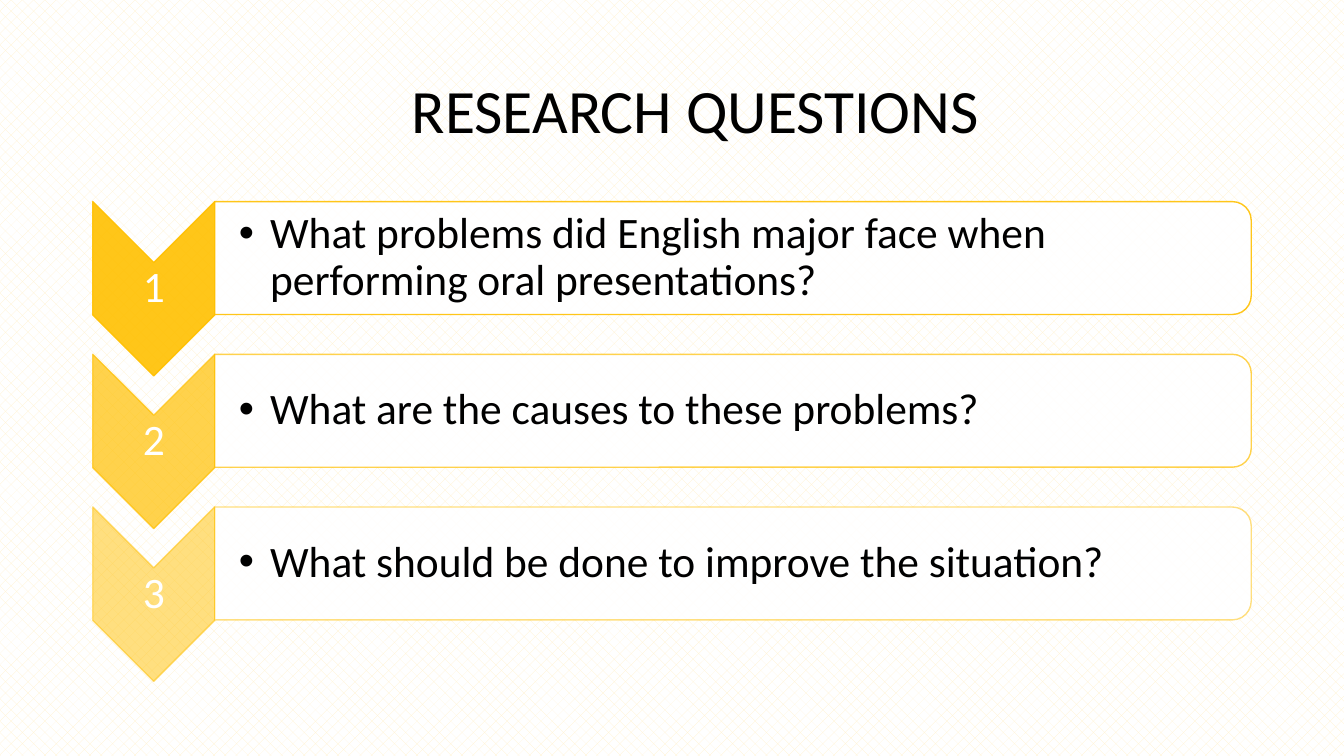
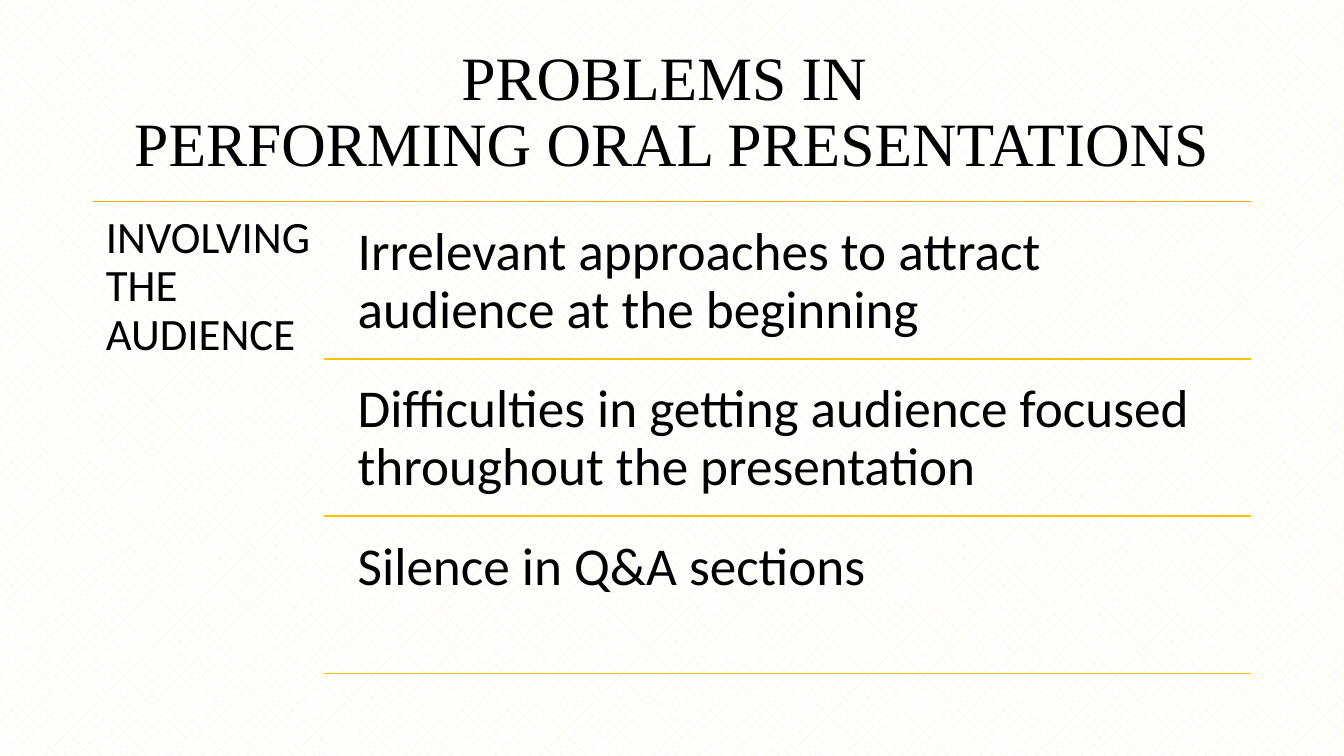
import pptx
import pptx.util
import pptx.dml.color
import pptx.enum.dml
import pptx.enum.shapes
import pptx.enum.text
import pptx.oxml.ns
import lxml.etree

Inches = pptx.util.Inches
Pt = pptx.util.Pt
RGBColor = pptx.dml.color.RGBColor
Shape = pptx.enum.shapes.MSO_SHAPE
Align = pptx.enum.text.PP_ALIGN
Anchor = pptx.enum.text.MSO_ANCHOR
qn = pptx.oxml.ns.qn

BLACK = RGBColor(0x00, 0x00, 0x00)
WHITE = RGBColor(0xFF, 0xFF, 0xFF)
CREAM = RGBColor(0xFF, 0xF2, 0xCC)
GOLD = RGBColor(0xFF, 0xC0, 0x00)
OCHRE = RGBColor(0xE7, 0xAE, 0x00)

WIDE, HIGH = 13.33, 7.5
EDGE, TOP = 0.92, 2
SPAN, DEPTH = WIDE - 2 * EDGE, 4.76
COL = SPAN / 5


def write(slide, text, left, top, width, height, size=44, font="Calibri",
          color=BLACK, align=Align.LEFT, anchor=Anchor.TOP, space=0.9,
          pad=0.1, inset=None, bullet=None):
    box = slide.shapes.add_textbox(*map(Inches, (left, top, width, height)))
    frame = box.text_frame
    frame.word_wrap = True
    frame.vertical_anchor = anchor
    frame.margin_left = Inches(pad if inset is None else inset)
    frame.margin_right = frame.margin_top = frame.margin_bottom = Inches(pad)
    para = frame.paragraphs[0]
    para.text = text
    para.alignment = align
    para.line_spacing = space
    for run in para.runs:
        run.font.size = Pt(size)
        run.font.name = font
        run.font.color.rgb = color
    if bullet:
        props = para._p.get_or_add_pPr()
        props.set("marL", str(Inches(0.31)))
        props.set("indent", str(-Inches(0.31)))
        face = lxml.etree.SubElement(props, qn("a:buFont"))
        face.set("typeface", "Arial")
        lxml.etree.SubElement(props, qn("a:buChar")).set("char", bullet)


def turn(slide, kind, left, top, width, height, color, fill, line):
    shape = slide.shapes.add_shape(
        kind, Inches(left + (width - height) / 2),
        Inches(top + (height - width) / 2), Inches(height), Inches(width))
    shape.rotation = 90
    shape.shadow.inherit = False
    shape.fill.solid()
    shape.fill.fore_color.rgb = color
    shape.line.color.rgb = GOLD
    shape.line.width = Pt(1)
    tints = shape._element.spPr.iter(qn("a:srgbClr"))
    for tint, share in zip(list(tints), (fill, line)):
        lxml.etree.SubElement(tint, qn("a:alpha")).set("val", str(share * 1000))


deck = pptx.Presentation()
deck.slide_width = Inches(WIDE)
deck.slide_height = Inches(HIGH)
back = deck.slide_master.background.fill
back.patterned()
back.pattern = pptx.enum.dml.MSO_PATTERN.PERCENT_25
back.fore_color.rgb = CREAM
back.back_color.rgb = WHITE
blank = deck.slide_layouts[6]

slide = deck.slides.add_slide(blank)
asks = [
    "What problems did English major face when performing oral presentations?",
    "What are the causes to these problems?",
    "What should be done to improve the situation?",
]
tip, tall, bar = 1.21, 1.73, 1.12
step = (DEPTH - tall) / (len(asks) - 1)
for row, ask in enumerate(asks):
    top = TOP + row * step
    shade = 90 - 20 * row
    turn(slide, Shape.CHEVRON, EDGE, top, tip, tall, GOLD, shade, shade)
    write(slide, str(row + 1), EDGE, top + tip / 2, tip, tall - tip, size=31,
          color=WHITE, align=Align.CENTER, anchor=Anchor.MIDDLE, pad=0.02)
    turn(slide, Shape.ROUND_2_SAME_RECTANGLE, EDGE + tip, top, SPAN - tip, bar,
         WHITE, 90, shade)
    write(slide, ask, EDGE + tip, top + 0.05, SPAN - tip - 0.05, bar - 0.1,
          size=31, anchor=Anchor.MIDDLE, pad=0.02, inset=0.24, bullet="•")
write(slide, "RESEARCH QUESTIONS", 1.52, 0.66, 10.76, 0.84,
      align=Align.CENTER, space=1.0, pad=0.05, inset=0.05)

slide = deck.slides.add_slide(blank)
write(slide, "PROBLEMS IN \vPERFORMING ORAL PRESENTATIONS", EDGE, 0.4, SPAN,
      1.45, font="Times New Roman", align=Align.CENTER, anchor=Anchor.MIDDLE,
      pad=0.05)
write(slide, "INVOLVING THE AUDIENCE", EDGE, TOP, COL, DEPTH, size=32, pad=0.13)
rules = [(EDGE, TOP, OCHRE)]
points = [
    "Irrelevant approaches to attract audience at the beginning",
    "Difficulties in getting audience focused throughout the presentation",
    "Silence in Q&A sections",
]
gap, cell = 0.07, 1.49
for row, point in enumerate(points):
    top = TOP + gap + row * (cell + gap)
    left = EDGE + COL + 0.17
    write(slide, point, left, top, EDGE + SPAN - left, cell, size=38, pad=0.16)
    rules.append((EDGE + COL, top + cell, GOLD))
for left, top, color in rules:
    rule = slide.shapes.add_connector(
        pptx.enum.shapes.MSO_CONNECTOR.STRAIGHT,
        *map(Inches, (left, top, EDGE + SPAN, top)))
    rule.line.color.rgb = color
    rule.line.width = Pt(1)
    lxml.etree.SubElement(rule._element.spPr, qn("a:effectLst"))

deck.save("out.pptx")
